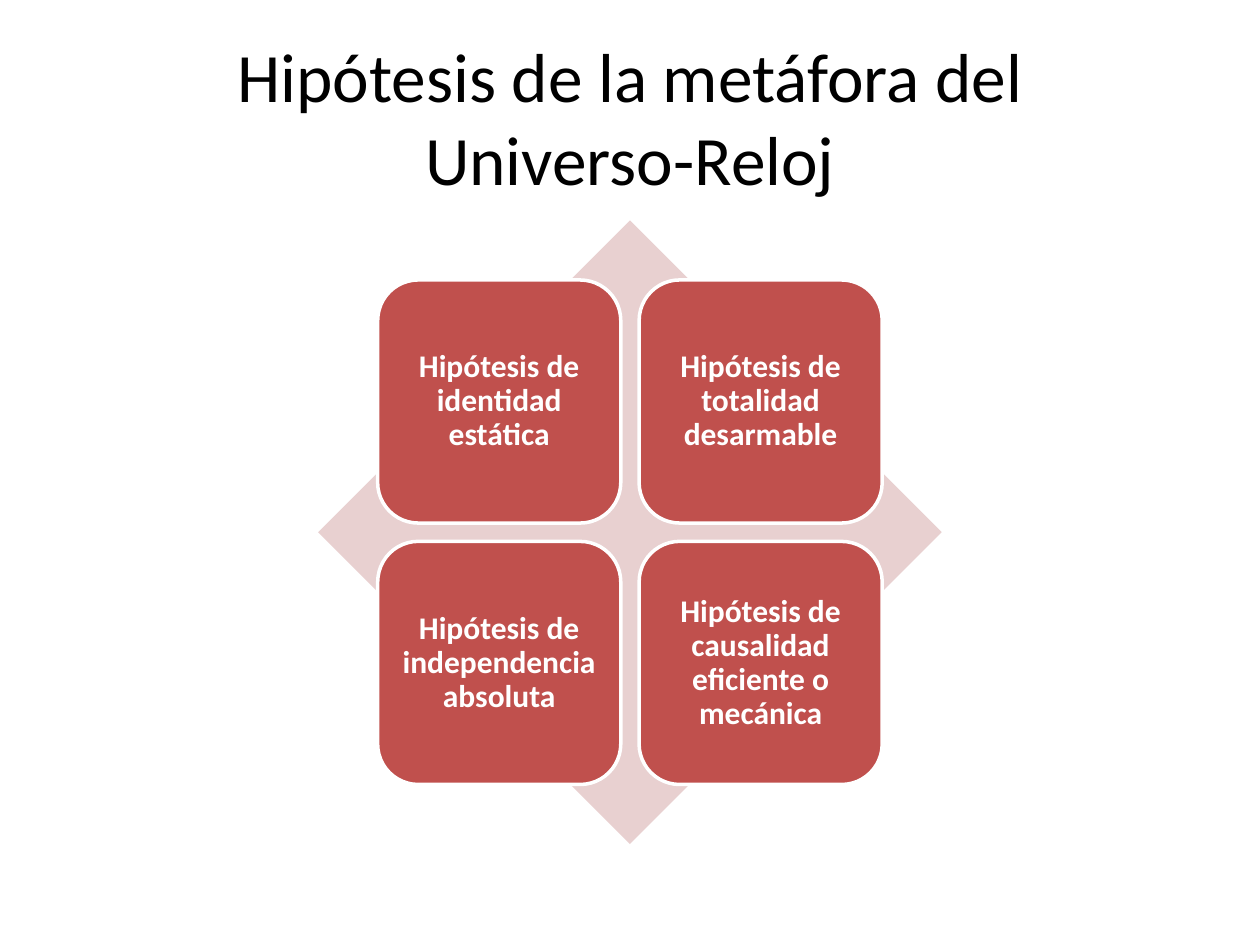
from pptx import Presentation
from pptx.dml.color import RGBColor
from pptx.enum.shapes import MSO_SHAPE
from pptx.enum.text import MSO_ANCHOR, PP_ALIGN
from pptx.util import Cm, Pt

BLACK = RGBColor(0x00, 0x00, 0x00)
WHITE = RGBColor(0xFF, 0xFF, 0xFF)
RED = RGBColor(0xC0, 0x50, 0x4D)
PINK = RGBColor(0xE8, 0xD0, 0xD0)

CENTER_X, CENTER_Y = 12.7, 10.73
DIAMOND_SIZE = 12.57
TILE_SIZE, TILE_GAP = 4.9, 0.37
HYPOTHESES = [
    ["Hipótesis de identidad estática", "Hipótesis de totalidad desarmable"],
    ["Hipótesis de independencia absoluta", "Hipótesis de causalidad eficiente o mecánica"],
]


class MatrixSlide:
    """Draws the title, diamond and tiles of a matrix on one slide."""

    font_name = "Calibri"

    def __init__(self, slide):
        self.slide = slide

    def set_text(self, shape, text, size, color, bold=False, line_spacing=None):
        text_frame = shape.text_frame
        text_frame.text = text
        text_frame.word_wrap = True
        text_frame.vertical_anchor = MSO_ANCHOR.MIDDLE
        paragraph = text_frame.paragraphs[0]
        paragraph.alignment = PP_ALIGN.CENTER
        paragraph.line_spacing = line_spacing
        for run in paragraph.runs:
            run.font.name = self.font_name
            run.font.size = Pt(size)
            run.font.bold = bold
            run.font.color.rgb = color

    def add_title(self, text):
        shape = self.slide.shapes.add_textbox(Cm(1.27), Cm(0.76), Cm(22.86), Cm(3.18))
        self.set_text(shape, text, 39.6, BLACK)

    def add_square(self, kind, left, top, size, color):
        shape = self.slide.shapes.add_shape(kind, Cm(left), Cm(top), Cm(size), Cm(size))
        shape.shadow.inherit = False
        shape.fill.solid()
        shape.fill.fore_color.rgb = color
        shape.line.fill.background()
        return shape

    def add_diamond(self):
        left, top = CENTER_X - DIAMOND_SIZE / 2, CENTER_Y - DIAMOND_SIZE / 2
        self.add_square(MSO_SHAPE.DIAMOND, left, top, DIAMOND_SIZE, PINK)

    def add_tile(self, row, column, text):
        pitch = TILE_SIZE + TILE_GAP
        left = CENTER_X - TILE_SIZE - TILE_GAP / 2 + column * pitch
        top = CENTER_Y - TILE_SIZE - TILE_GAP / 2 + row * pitch
        shape = self.add_square(MSO_SHAPE.ROUNDED_RECTANGLE, left, top, TILE_SIZE, RED)
        shape.line.color.rgb = WHITE
        shape.line.width = Pt(2)
        text_frame = shape.text_frame
        text_frame.margin_left = text_frame.margin_right = Cm(0.18)
        text_frame.margin_top = text_frame.margin_bottom = Cm(0.18)
        self.set_text(shape, text, 18, WHITE, bold=True, line_spacing=0.9)


def main():
    presentation = Presentation()
    presentation.slide_width, presentation.slide_height = Cm(25.4), Cm(19.05)
    matrix = MatrixSlide(presentation.slides.add_slide(presentation.slide_layouts[6]))
    matrix.add_title("Hipótesis de la metáfora del\vUniverso-Reloj")
    matrix.add_diamond()
    for row, texts in enumerate(HYPOTHESES):
        for column, text in enumerate(texts):
            matrix.add_tile(row, column, text)
    presentation.save("out.pptx")


if __name__ == "__main__":
    main()
